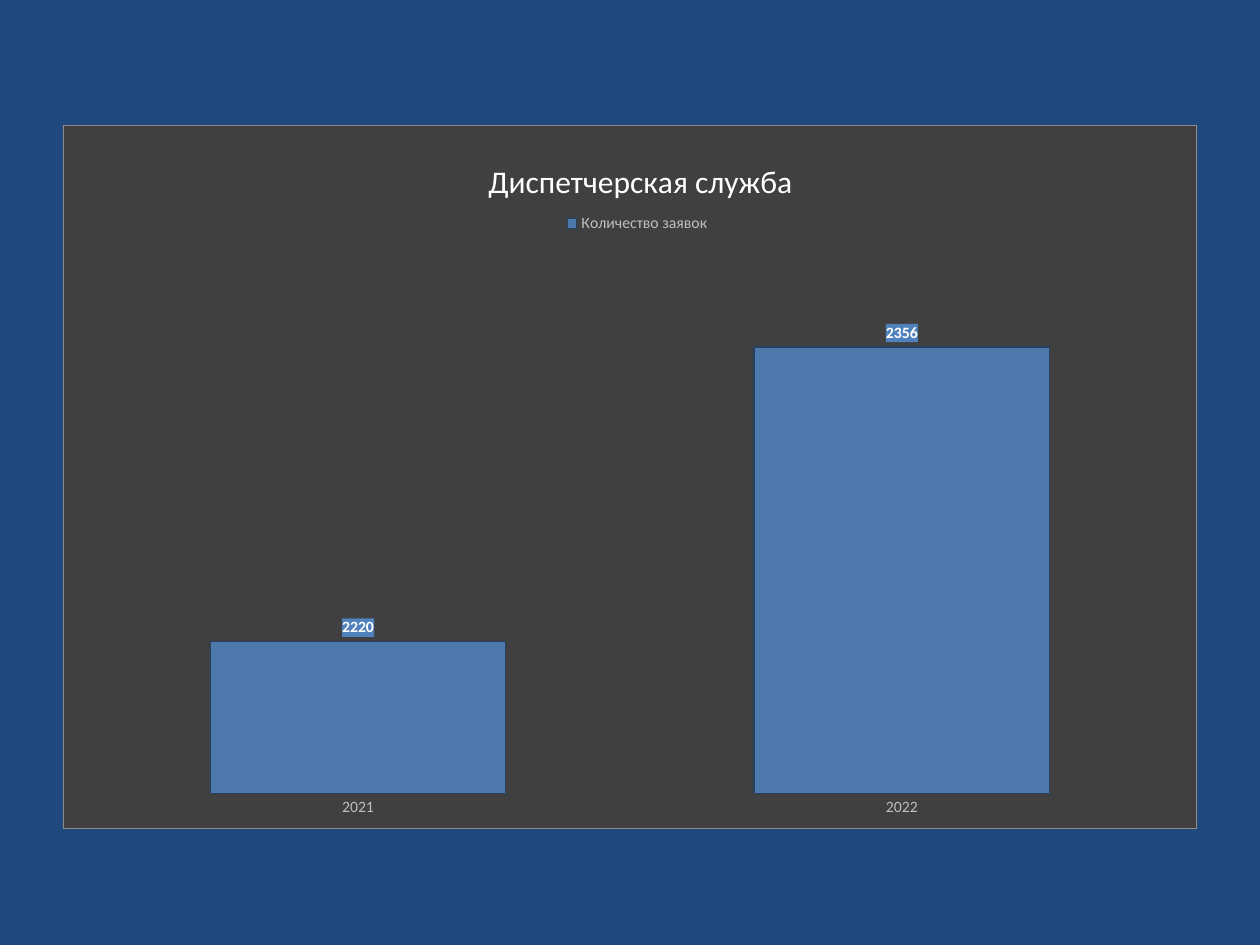
from lxml import etree
from pptx import Presentation
from pptx.chart.data import CategoryChartData
from pptx.dml.color import RGBColor
from pptx.enum.chart import XL_CHART_TYPE as ChartType
from pptx.enum.chart import XL_LABEL_POSITION as LabelPos
from pptx.enum.chart import XL_LEGEND_POSITION as LegendPos
from pptx.enum.chart import XL_TICK_MARK as TickMark
from pptx.oxml import parse_xml
from pptx.oxml.ns import nsdecls, qn
from pptx.util import Inches, Pt

NAVY = RGBColor(0x1F, 0x49, 0x7D)
BLUE = RGBColor(0x4F, 0x81, 0xBD)
DARK_BLUE = RGBColor(0x25, 0x40, 0x61)
CHARCOAL = RGBColor(0x40, 0x40, 0x40)
GREY = RGBColor(0x8C, 0x8C, 0x8C)
SILVER = RGBColor(0xBF, 0xBF, 0xBF)
WHITE = RGBColor(0xFF, 0xFF, 0xFF)


class SlideBuilder:
    """Hold the style and the current slide, and draw its elements."""

    font_name = "Calibri"

    def __init__(self, prs):
        self.slide = prs.slides.add_slide(prs.slide_layouts[6])

    def background(self, color):
        fill = self.slide.background.fill
        fill.solid()
        fill.fore_color.rgb = color

    def style(self, font, size, color, bold=False):
        font.name = self.font_name
        font.size = Pt(size)
        font.color.rgb = color
        font.bold = bold

    def box(self, fill, line=None, width=0):
        ln = "<a:ln><a:noFill/></a:ln>"
        if line is not None:
            ln = (f'<a:ln w="{Pt(width)}"><a:solidFill><a:srgbClr val="{line}"/>'
                  "</a:solidFill></a:ln>")
        return parse_xml(f'<c:spPr {nsdecls("c", "a")}><a:solidFill>'
                         f'<a:srgbClr val="{fill}"/></a:solidFill>{ln}</c:spPr>')

    def place(self, element, after=None, **values):
        for old in element.findall(qn("c:layout")):
            element.remove(old)
        target = '<c:layoutTarget val="inner"/>' if "w" in values else ""
        modes = "".join(f'<c:{k}Mode val="edge"/>' for k in "xy")
        sizes = "".join(f'<c:{k} val="{v}"/>' for k, v in values.items())
        layout = parse_xml(f'<c:layout {nsdecls("c")}><c:manualLayout>{target}'
                           f"{modes}{sizes}</c:manualLayout></c:layout>")
        if after is None:
            element.insert(0, layout)
        else:
            element.find(qn(after)).addnext(layout)

    def column_chart(self, title, name, values, left, top, width, height):
        data = CategoryChartData()
        data.categories = list(values)
        data.add_series(name, list(values.values()))
        chart = self.slide.shapes.add_chart(
            ChartType.COLUMN_CLUSTERED, Inches(left), Inches(top),
            Inches(width), Inches(height), data).chart
        self.style(chart.font, 10, WHITE)

        chart.has_title = True
        tf = chart.chart_title.text_frame
        tf.text = title
        self.style(tf.paragraphs[0].runs[0].font, 18, WHITE)

        chart.has_legend = True
        chart.legend.position = LegendPos.TOP
        chart.legend.include_in_layout = False
        self.style(chart.legend.font, 9, SILVER)
        self.axes(chart)
        self.columns(chart.plots[0])

        root = chart.element.find(qn("c:chart"))
        root.addnext(self.box(CHARCOAL, GREY, 0.5))
        self.place(root.find(qn("c:title")), "c:tx", x=0.37, y=0.04)
        self.place(root.find(qn("c:legend")), "c:legendPos", x=0.44, y=0.12)
        area = root.find(qn("c:plotArea"))
        self.place(area, x=0.02, y=0.18, w=0.96, h=0.77)
        series = area.find(f'.//{qn("c:ser")}')
        color = series.find(f'.//{qn("a:srgbClr")}')
        etree.SubElement(color, qn("a:alpha"), val="88000")
        labels = series.find(qn("c:dLbls"))
        labels.find(qn("c:txPr")).addprevious(self.box(BLUE))

    def axes(self, chart):
        axis = chart.category_axis
        axis.major_tick_mark = axis.minor_tick_mark = TickMark.NONE
        axis.format.line.fill.background()
        self.style(axis.tick_labels.font, 9, SILVER)
        scale = chart.value_axis
        scale.visible = scale.has_major_gridlines = False
        scale.minimum_scale, scale.maximum_scale = 2150, 2400

    def columns(self, plot):
        plot.gap_width = 84
        plot.vary_by_categories = False
        series = plot.series[0]
        fmt = series.format
        fmt.fill.solid()
        fmt.fill.fore_color.rgb = BLUE
        fmt.line.color.rgb = DARK_BLUE
        fmt.line.width = Pt(0.75)
        labels = series.data_labels
        labels.show_value = True
        labels.position = LabelPos.OUTSIDE_END
        self.style(labels.font, 9, WHITE, bold=True)


def main():
    prs = Presentation()
    prs.slide_width, prs.slide_height = Inches(10), Inches(7.5)
    s = SlideBuilder(prs)
    s.background(NAVY)
    s.column_chart("Диспетчерская служба", "Количество заявок",
                   {"2021": 2220, "2022": 2356}, 0.5, 0.99, 9, 5.59)
    prs.save("out.pptx")


if __name__ == "__main__":
    main()
